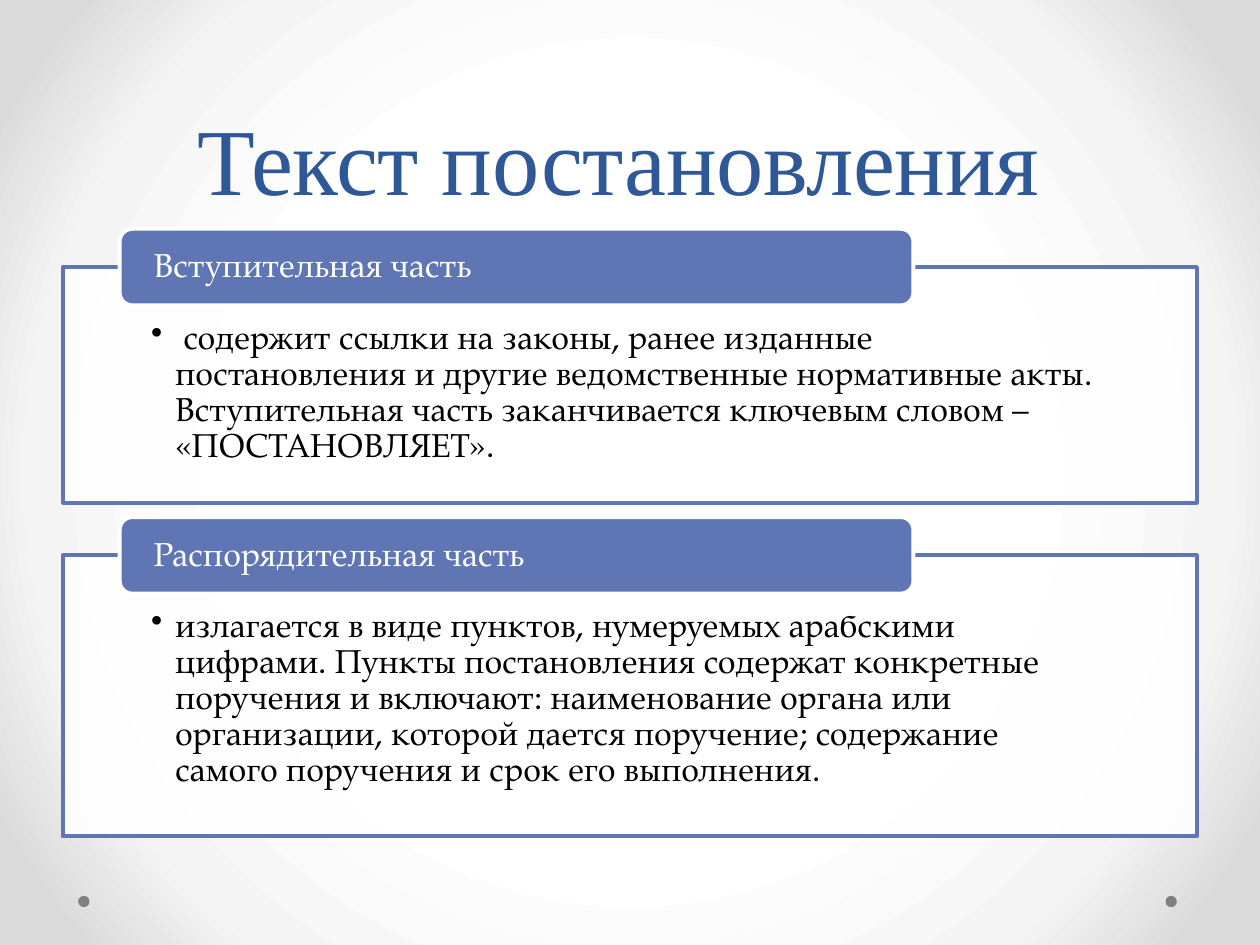
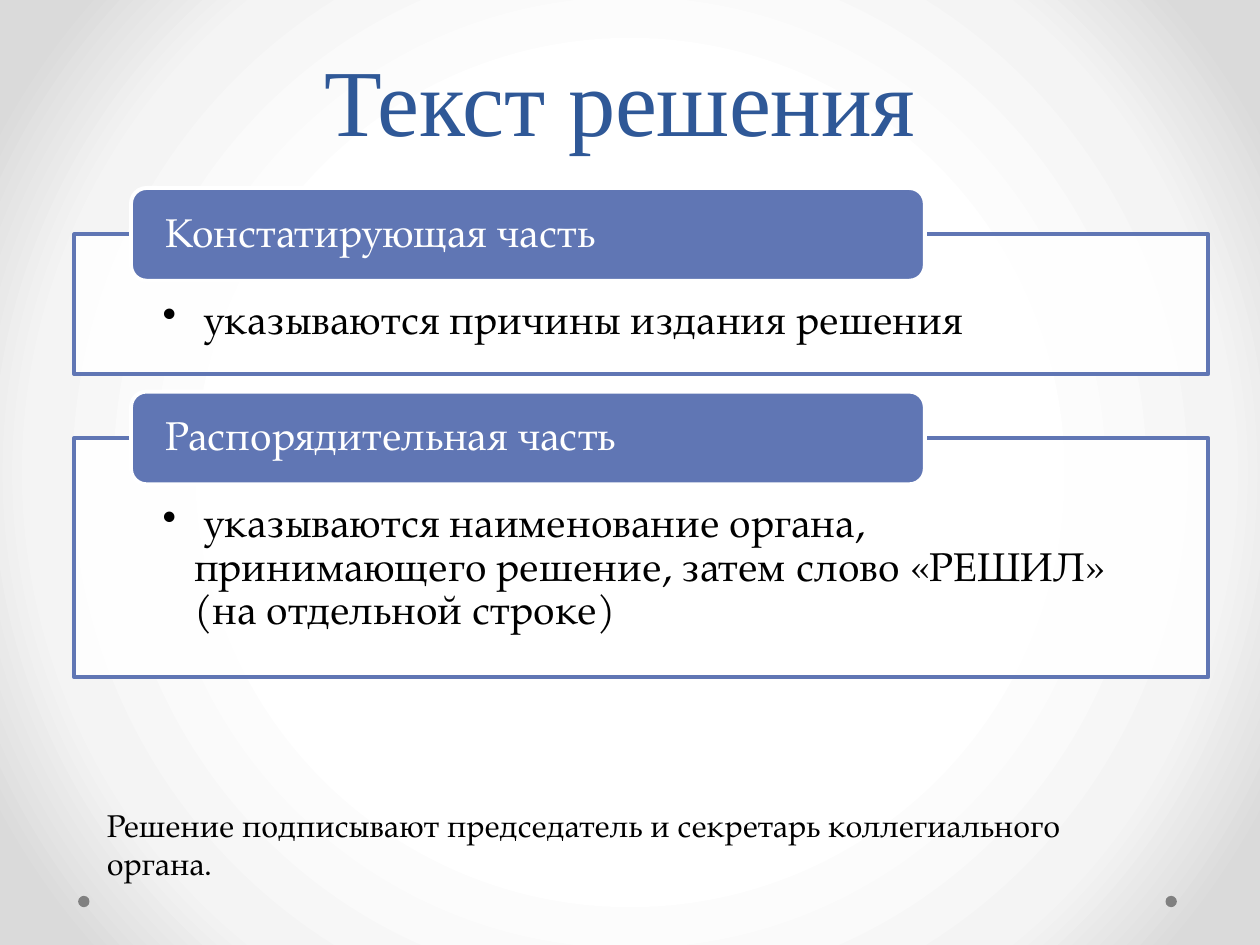
from lxml.etree import SubElement
from pptx import Presentation
from pptx.dml.color import RGBColor
from pptx.enum.shapes import MSO_SHAPE
from pptx.enum.text import MSO_ANCHOR, PP_ALIGN
from pptx.oxml import parse_xml
from pptx.oxml.ns import nsdecls, qn
from pptx.util import Inches, Pt

COLUMNS, ROWS = 100, 75
BLUE, TITLE_BLUE, WHITE, BLACK, GRAY = "6076B4", "2F5897", "FFFFFF", "000000", "808080"
BODY_FONT, TITLE_FONT = "TeX Gyre Pagella", "Times New Roman"
BACKGROUND_STOPS = ((50, "FFFFFF"), (76, "F4F4F4"), (92, "DADADA"))


def color(value):
    return RGBColor.from_string(value)


class Deck:
    """Hold the shared style and the slide being built on a 100 by 75 grid."""

    def __init__(self):
        self.presentation = Presentation()
        self.presentation.slide_width = Inches(10)
        self.presentation.slide_height = Inches(7.5)
        self.column = self.presentation.slide_width / COLUMNS
        self.row = self.presentation.slide_height / ROWS
        self.slide = None

    def place(self, left, top, width, height):
        return (round(left * self.column), round(top * self.row),
                round(width * self.column), round(height * self.row))

    def add_slide(self):
        self.slide = self.presentation.slides.add_slide(self.presentation.slide_layouts[6])
        self.paint_background()
        for left in (92.5, 6.2):
            self.shape(MSO_SHAPE.OVAL, (left, 71.1, 0.9, 0.9), GRAY)

    def paint_background(self):
        fill = self.slide.background.fill
        fill.solid()
        stops = "".join(f'<a:gs pos="{position * 1000}"><a:srgbClr val="{value}"/></a:gs>'
                        for position, value in BACKGROUND_STOPS)
        gradient = parse_xml(
            f'<a:gradFill {nsdecls("a")} rotWithShape="1"><a:gsLst>{stops}</a:gsLst>'
            '<a:path path="circle"><a:fillToRect l="50000" t="50000" r="50000" b="50000"/>'
            '</a:path></a:gradFill>')
        solid = next(self.slide.background._cSld.iter(qn("a:solidFill")))
        solid.getparent().replace(solid, gradient)

    def shape(self, kind, box, fill, line=None, opacity=100):
        shape = self.slide.shapes.add_shape(kind, *self.place(*box))
        shape.shadow.inherit = False
        shape.fill.solid()
        shape.fill.fore_color.rgb = color(fill)
        if opacity < 100:
            fill_color = next(shape._element.spPr.iter(qn("a:srgbClr")))
            SubElement(fill_color, qn("a:alpha"), val=str(opacity * 1000))
        if line:
            shape.line.color.rgb = color(line)
            shape.line.width = Pt(2.25)
        else:
            shape.line.fill.background()
        return shape

    def fill_text(self, shape, text, size, ink, font=BODY_FONT, anchor=MSO_ANCHOR.TOP,
                  alignment=PP_ALIGN.LEFT, spacing=None, insets=(1, 0.5, 1, 0.5), indent=0):
        frame = shape.text_frame
        frame.word_wrap = True
        frame.vertical_anchor = anchor
        left, top, right, bottom = insets
        frame.margin_left, frame.margin_right = round(left * self.column), round(right * self.column)
        frame.margin_top, frame.margin_bottom = round(top * self.row), round(bottom * self.row)
        frame.text = text
        paragraph = frame.paragraphs[0]
        if indent:
            properties = paragraph._p.get_or_add_pPr()
            offset = round(indent * self.column)
            properties.set("marL", str(offset))
            properties.set("indent", str(-offset))
            SubElement(properties, qn("a:buChar"), char="•")
        paragraph.alignment = alignment
        if spacing:
            paragraph.line_spacing = spacing
        run = paragraph.runs[0]
        run.font.size = Pt(size)
        run.font.name = font
        run.font.color.rgb = color(ink)
        return run

    def text(self, box, text, size, ink, **style):
        text_box = self.slide.shapes.add_textbox(*self.place(*box))
        return self.fill_text(text_box, text, size, ink, **style)

    def title(self, box, text):
        run = self.text(box, text, 54, TITLE_BLUE, font=TITLE_FONT, anchor=MSO_ANCHOR.BOTTOM,
                        alignment=PP_ALIGN.CENTER, spacing=Pt(58))
        run._r.get_or_add_rPr().set("spc", "-20")

    def card(self, left, top, height, heading, body, size, indent):
        tab = size * 0.32
        frame = self.shape(MSO_SHAPE.RECTANGLE, (left, top, 90, height), WHITE, BLUE, opacity=90)
        self.fill_text(frame, body, size, BLACK, spacing=0.9, indent=indent,
                       insets=(7, tab * 0.7, 7, tab * 0.25))
        label = self.shape(MSO_SHAPE.ROUNDED_RECTANGLE,
                           (left + 4.5, top - tab / 2, 63, tab), BLUE, WHITE)
        self.fill_text(label, heading, size, WHITE, anchor=MSO_ANCHOR.MIDDLE, spacing=0.9,
                       insets=(2.4, 0, 2.4, 0))

    def cards(self, left, top, size, indent, entries):
        for height, heading, body in entries:
            self.card(left, top, height, heading, body, size, indent)
            top += height + size * 0.22


def main():
    deck = Deck()

    deck.add_slide()
    deck.title((5, 0, 90, 17.5), "Текст постановления ")
    deck.cards(5, 21.2, 19, 1.9, (
        (18.7, "Вступительная часть",
         " содержит ссылки на законы, ранее изданные постановления и другие ведомственные "
         "нормативные акты. Вступительная часть заканчивается ключевым словом – «ПОСТАНОВЛЯЕТ»."),
        (22.3, "Распорядительная часть",
         "излагается в виде пунктов, нумеруемых арабскими цифрами. Пункты постановления содержат "
         "конкретные поручения и включают: наименование органа или организации, которой дается "
         "поручение; содержание самого поручения и срок его выполнения."),
    ))

    deck.add_slide()
    deck.title((5.1, 0.3, 90, 12.5), "Текст решения ")
    deck.cards(5.9, 18.6, 23, 2.5, (
        (11.1, "Констатирующая часть", " указываются причины издания решения"),
        (19, "Распорядительная часть",
         " указываются наименование органа, принимающего решение, затем слово «РЕШИЛ» "
         "(на отдельной строке)"),
    ))
    deck.text((7.5, 63.5, 84.3, 4),
              "Решение подписывают председатель и секретарь коллегиального органа.", 18, BLACK)

    deck.presentation.save("out.pptx")


if __name__ == "__main__":
    main()
